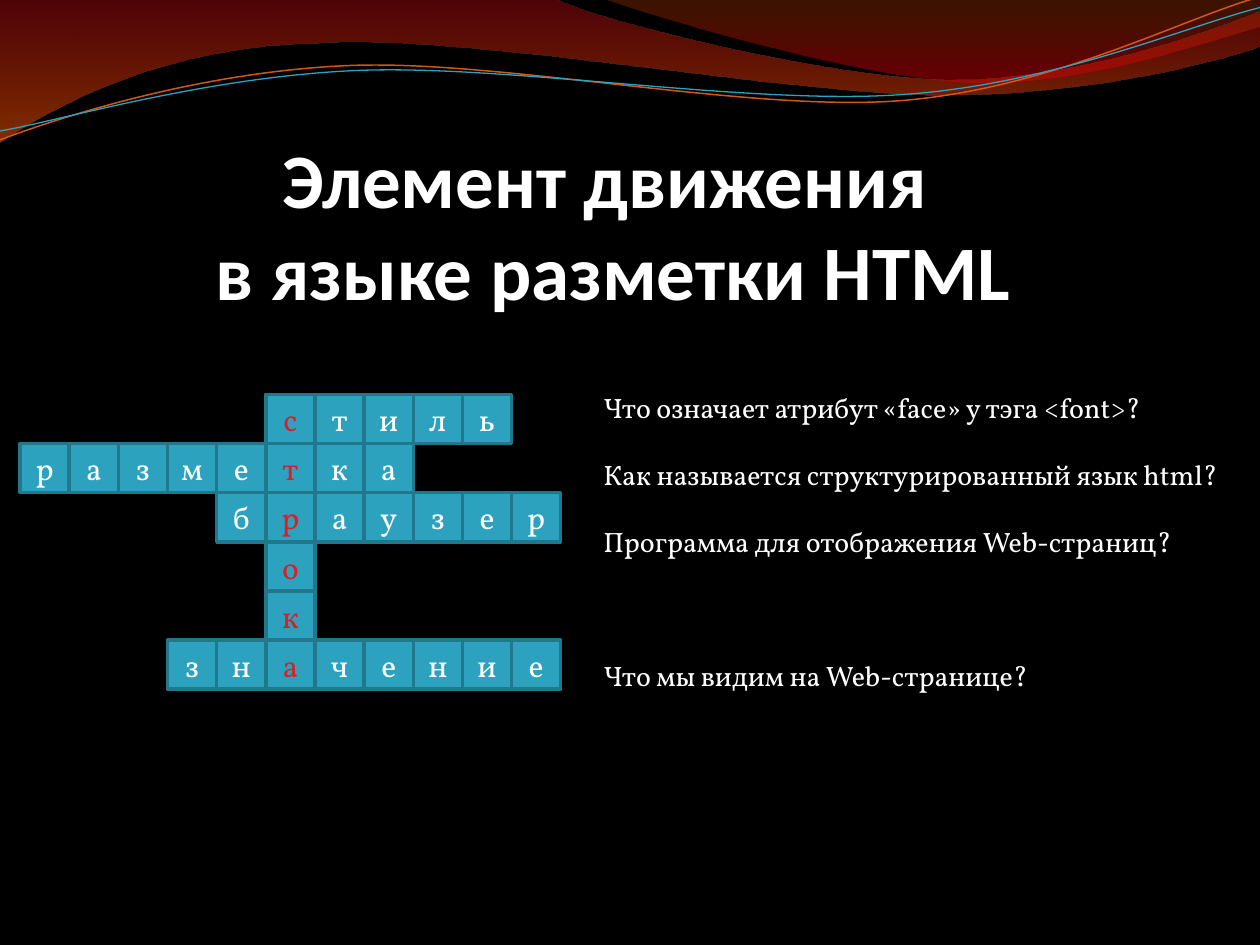
import math

import pptx
import pptx.dml.color
import pptx.enum.shapes
import pptx.enum.text
import pptx.oxml.ns
import pptx.util
from lxml import etree
from pptx.oxml.ns import qn
from pptx.util import Inches, Pt

COLORS = {
    "background": "000000",
    "text": "FFFFFF",
    "keyword": "DA1F28",
    "cell": "2DA2BF",
    "cell_border": "21788D",
    "orange_line": "CF5818",
    "blue_line": "2DA2BF",
    "dark_red": "AF0911",
    "orange": "EE5300",
    "brown": "C24400",
    "red": "DC000B",
}
TITLE_FONT = "Calibri"
BODY_FONT = "Vollkorn"

# A curve is a start point followed by steps: one point is a straight line,
# three points are a cubic Bezier curve.
LEFT_WAVE = [
    (0, 0), [(4.4, -0.01)],
    [(4.76, 0.17), (6.64, 0.63), (7.58, 0.63)],
    [(8.53, 0.63), (9.58, 0.26), (10, 0.09)],
    [(10.01, 0.36)],
    [(9.83, 0.44), (8.7, 0.76), (7.46, 0.75)],
    [(6.22, 0.75), (3.82, 0.28), (2.57, 0.34)],
    [(1.29, 0.36), (0.46, 0.83), (-0.01, 1.13)],
    [(0, 0)],
]
RIGHT_WAVE = [
    (4.79, -0.01),
    [(5.09, 0.11), (6.82, 0.62), (7.69, 0.65)],
    [(8.56, 0.69), (9.61, 0.32), (10, 0.21)],
    [(10, 0)],
    [(4.79, -0.01)],
]
ORANGE_CURVE = [
    (0, 1.11),
    [(0.48, 0.93), (1.58, 0.57), (2.77, 0.52)],
    [(3.95, 0.47), (5.93, 0.89), (7.13, 0.8)],
    [(8.33, 0.71), (9.38, 0.15), (9.98, -0.02)],
]
BLUE_CURVE = [
    (0, 1.04),
    [(0.47, 0.96), (1.64, 0.61), (2.83, 0.56)],
    [(4.03, 0.51), (5.97, 0.84), (7.17, 0.75)],
    [(8.36, 0.67), (9.41, 0.21), (10, 0.06)],
]
LINE_TILT = -2.7

# Each word with the index of its letter in the vertical keyword.
CROSSWORD = [("стиль", 0), ("разметка", 5), ("браузер", 1),
             ("о", 0), ("к", 0), ("значение", 2)]
GRID_LEFT, GRID_TOP, CELL = 0.16, 3.13, 0.39
KEYWORD_COLUMN = 5

# Each question with the space before it, in points.
QUESTIONS = [
    ("Что означает атрибут «face» у тэга <font>?", 0),
    ("Как называется структурированный язык html?", 19.2),
    ("Программа для отображения Web-страниц?", 19.2),
    ("Что мы видим на Web-странице?", 57.5),
]


def rgb(name):
    return pptx.dml.color.RGBColor.from_string(COLORS[name])


def style_text(paragraph, font, size, color="text", bold=False):
    for run in paragraph.runs:
        run.font.name = font
        run.font.size = Pt(size)
        run.font.bold = bold
        run.font.color.rgb = rgb(color)


def rotate(point, center, degrees):
    angle = math.radians(degrees)
    dx, dy = point[0] - center[0], point[1] - center[1]
    return (center[0] + dx * math.cos(angle) - dy * math.sin(angle),
            center[1] + dx * math.sin(angle) + dy * math.cos(angle))


def add_curve(slide, curve, close):
    """Draw the control points as a freeform, then bend its steps into curves."""
    start, *steps = curve
    builder = slide.shapes.build_freeform(Inches(start[0]), Inches(start[1]))
    builder.add_line_segments(
        [(Inches(x), Inches(y)) for step in steps for x, y in step], close=close)
    shape = builder.convert_to_shape()
    shape.shadow.inherit = False
    segments = iter(list(shape.element.iter(qn("a:lnTo"))))
    for step in steps:
        first, *others = [next(segments) for _ in step]
        if others:
            first.tag = qn("a:cubicBezTo")
            for other in others:
                first.append(other[0])
                other.getparent().remove(other)
    return shape


def add_wave(slide, curve, stops):
    """Add a filled wave; stops are (position, colour, opacity percent)."""
    wave = add_curve(slide, curve, close=True)
    wave.line.fill.background()
    wave.fill.gradient()
    wave.fill.gradient_angle = 270
    for stop, (position, color, opacity) in zip(wave.fill.gradient_stops, stops):
        stop.position = position
        stop.color.rgb = rgb(color)
    colors = wave.element.spPr.find(qn("a:gradFill")).iter(qn("a:srgbClr"))
    for element, (position, color, opacity) in zip(colors, stops):
        etree.SubElement(element, qn("a:alpha"), val=str(opacity * 1000))


def add_wave_line(slide, curve, center, color, width):
    """Add a tilted line: level its points around center, then rotate the shape."""
    start, *steps = curve
    level = [rotate(start, center, -LINE_TILT)]
    level += [[rotate(point, center, -LINE_TILT) for point in step] for step in steps]
    line = add_curve(slide, level, close=False)
    line.rotation = LINE_TILT
    line.fill.background()
    line.line.color.rgb = rgb(color)
    line.line.width = Pt(width)


def add_title(slide):
    title = slide.shapes.title
    title.left, title.top = Inches(0.62), Inches(1.02)
    title.width, title.height = Inches(8.5), Inches(1.49)
    frame = title.text_frame
    frame.margin_left = frame.margin_right = frame.margin_top = frame.margin_bottom = 0
    frame.vertical_anchor = pptx.enum.text.MSO_ANCHOR.BOTTOM
    frame.text = "Элемент движения \vв языке разметки HTML"
    frame.paragraphs[0].alignment = pptx.enum.text.PP_ALIGN.CENTER
    style_text(frame.paragraphs[0], TITLE_FONT, 44, bold=True)


def add_cell(slide, column, row, letter):
    cell = slide.shapes.add_shape(
        pptx.enum.shapes.MSO_SHAPE.RECTANGLE,
        Inches(GRID_LEFT + column * CELL), Inches(GRID_TOP + row * CELL),
        Inches(CELL), Inches(CELL))
    cell.shadow.inherit = False
    cell.fill.solid()
    cell.fill.fore_color.rgb = rgb("cell")
    cell.line.color.rgb = rgb("cell_border")
    cell.line.width = Pt(2)
    frame = cell.text_frame
    frame.vertical_anchor = pptx.enum.text.MSO_ANCHOR.MIDDLE
    frame.text = letter
    frame.paragraphs[0].alignment = pptx.enum.text.PP_ALIGN.CENTER
    color = "keyword" if column == KEYWORD_COLUMN else "text"
    style_text(frame.paragraphs[0], BODY_FONT, 18, color)


def add_crossword(slide):
    for row, (word, key_index) in enumerate(CROSSWORD):
        for index, letter in enumerate(word):
            add_cell(slide, KEYWORD_COLUMN - key_index + index, row, letter)


def add_questions(slide):
    questions = slide.shapes.add_textbox(Inches(4.69), Inches(3.05), Inches(5.16), Inches(2.79))
    frame = questions.text_frame
    frame.word_wrap = True
    frame.text = "\n".join(question for question, gap in QUESTIONS)
    for paragraph, (question, gap) in zip(frame.paragraphs, QUESTIONS):
        paragraph.space_before = Pt(gap)
        style_text(paragraph, BODY_FONT, 16)


def main():
    presentation = pptx.Presentation()
    presentation.slide_width, presentation.slide_height = Inches(10), Inches(7.5)
    slide = presentation.slides.add_slide(presentation.slide_layouts[5])
    slide.background.fill.solid()
    slide.background.fill.fore_color.rgb = rgb("background")

    add_wave(slide, LEFT_WAVE, [(0, "dark_red", 45), (1, "orange", 55)])
    add_wave(slide, RIGHT_WAVE, [(0, "brown", 30), (0.8, "red", 45)])
    add_wave_line(slide, ORANGE_CURVE, (4.99, 0.58), "orange_line", 0.85)
    add_wave_line(slide, BLUE_CURVE, (5, 0.59), "blue_line", 0.75)
    add_title(slide)
    add_crossword(slide)
    add_questions(slide)
    presentation.save("out.pptx")


if __name__ == "__main__":
    main()
